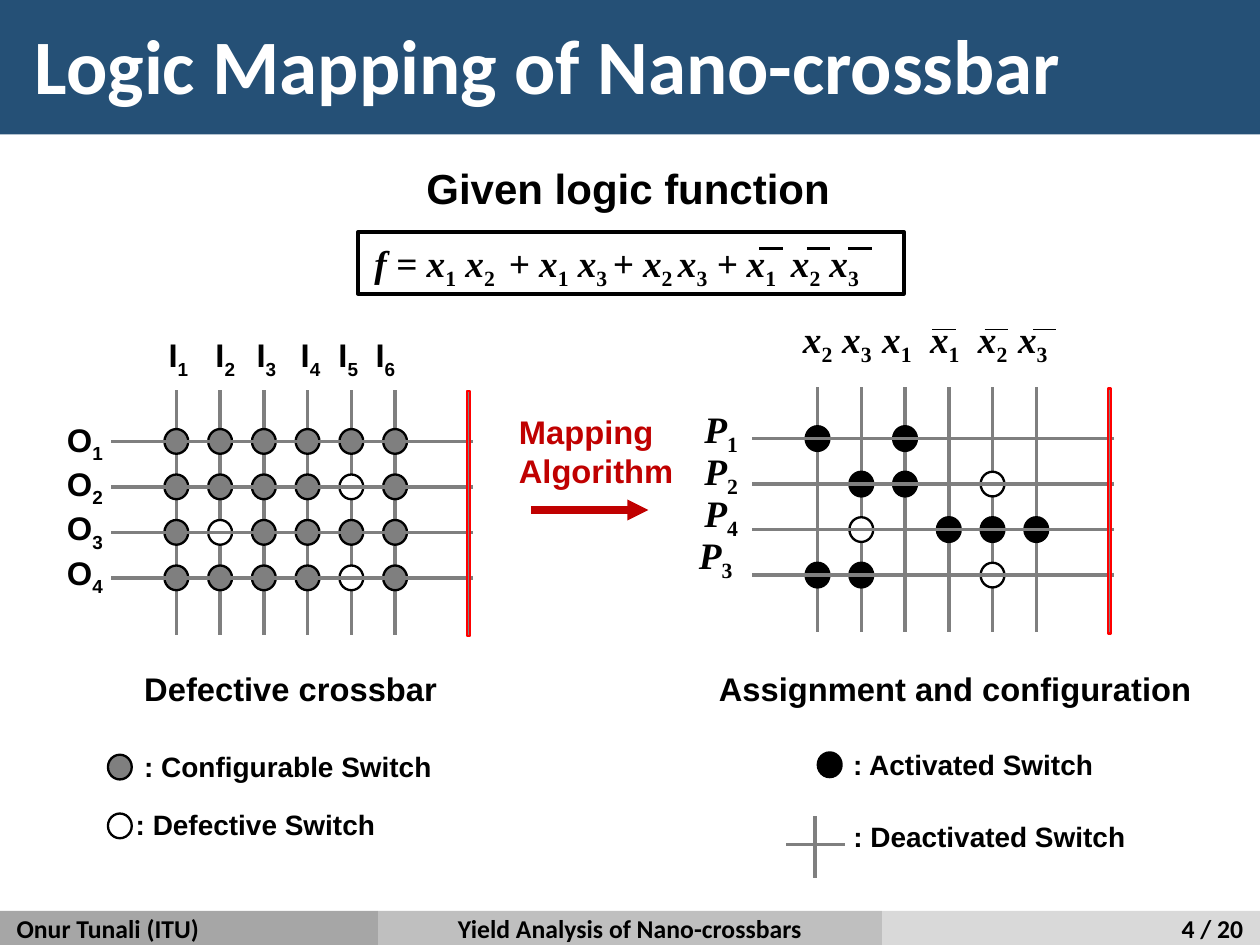
from dataclasses import dataclass
from typing import NamedTuple

from lxml import etree
from pptx import Presentation
from pptx.dml.color import RGBColor
from pptx.enum.shapes import MSO_CONNECTOR, MSO_SHAPE
from pptx.enum.text import MSO_ANCHOR, PP_ALIGN
from pptx.oxml.ns import qn
from pptx.util import Pt

STRAIGHT = MSO_CONNECTOR.STRAIGHT
RECTANGLE, OVAL = MSO_SHAPE.RECTANGLE, MSO_SHAPE.OVAL
TOP, MIDDLE = MSO_ANCHOR.TOP, MSO_ANCHOR.MIDDLE
LEFT, CENTER, RIGHT = PP_ALIGN.LEFT, PP_ALIGN.CENTER, PP_ALIGN.RIGHT

BLACK, WHITE, GRAY = "000000", "FFFFFF", "7F7F7F"
RED, DARK_RED, NAVY = "FF0000", "C00000", "255076"
SLIDE_WIDTH, SLIDE_HEIGHT = 540, 405

COLUMN_COUNT = 6
COLUMN_PITCH, ROW_PITCH = 18.75, 19.5
COLUMN_LENGTH, ROW_LENGTH = 105, 155
SWITCH_WIDTH, SWITCH_HEIGHT = 10.2, 10.6
SWITCH_FILLS = {"c": GRAY, "d": WHITE, "a": BLACK}  # configurable, defective, activated


class Box(NamedTuple):
    left: float
    top: float
    width: float
    height: float


class Style(NamedTuple):
    size: float
    name: str = "Arial"
    color: str = BLACK
    italic: bool = False
    align: PP_ALIGN = LEFT
    anchor: MSO_ANCHOR = TOP
    spacing: float | None = None
    wrap: bool = True
    tabs: tuple[float, ...] = ()


class Label(NamedTuple):
    box: Box
    text: str
    style: Style


class Panel(NamedTuple):
    box: Box
    fill: str
    text: str
    align: PP_ALIGN


@dataclass
class Crossbar:
    """A grid of wires; rows hold one switch letter per column, "." for none."""
    left: float
    top: float
    rows: tuple[str, ...]


class Line(NamedTuple):
    x: float
    y: float
    width: float
    height: float
    color: str = GRAY
    weight: float = 1.5
    arrow: bool = False


MATH = Style(16, "Times New Roman", italic=True)
CAPTION, LEGEND = Style(14), Style(12)
FOOTER = Style(11, "Calibri", anchor=MIDDLE)

CROSSBARS = [
    Crossbar(75.6, 189.2, ("cccccc", "ccccdc", "cdcccc", "ccccdc")),
    Crossbar(350.4, 188, ("a.a...", ".aa.d.", ".d.aaa", "aa..d.")),
]
PANELS = [
    Panel(Box(162, 390.4, 216, 14.6), "BFBFBF", "Yield Analysis of Nano-crossbars", CENTER),
    Panel(Box(0, 390.4, 162, 14.6), "A6A6A6", "Onur Tunali (ITU)", LEFT),
    Panel(Box(378, 390.4, 162, 14.6), "D9D9D9", "4 / 20", RIGHT),
]
# Text in braces is subscript.
FORMULA = "f = x{1} x{2}\t+ x{1} x{3 }+ x{2 }x{3} +\tx{1}\tx{2}\tx{3}"
FORMULA_STYLE = MATH._replace(tabs=(57.5, 159.5, 178.5, 195))
LABELS = [
    Label(Box(7.9, 7.2, 524, 45.4), "Logic Mapping of Nano-crossbar",
          Style(33, "Calibri", WHITE, anchor=MIDDLE, spacing=0.9, wrap=False)),
    Label(Box(175.7, 66.2, 188.6, 29), "Given logic function", Style(18)),
    Label(Box(21.6, 176.4, 33.1, 84.2), "O{1}\nO{2}\nO{3}\nO{4}",
          CAPTION._replace(spacing=Pt(19))),
    Label(Box(65.2, 141, 128, 24.5), "I{1}\tI{2}\tI{3}\tI{4}\tI{5}\tI{6}",
          CAPTION._replace(anchor=MIDDLE, tabs=(20.1, 37.7, 56.6, 72.8, 88.7))),
    Label(Box(54.7, 283, 148, 24.5), "Defective crossbar", CAPTION),
    Label(Box(301, 283, 221, 24.5), "Assignment and configuration", CAPTION),
    Label(Box(290.2, 174.2, 33.1, 98), "P{1}\nP{2}\nP{4}\nP{3 }",
          MATH._replace(align=RIGHT, spacing=Pt(18))),
    Label(Box(337, 133.2, 186.5, 26.6), "x{2}\tx{3}\tx{1}\tx{1}\tx{2}\tx{3}",
          MATH._replace(anchor=MIDDLE, tabs=(16.8, 34, 54.5, 75, 92.2))),
    Label(Box(215.3, 172.8, 87, 41), "Mapping\nAlgorithm", CAPTION._replace(color=DARK_RED)),
    Label(Box(54.7, 317.5, 146, 21.6), ": Configurable Switch", LEGEND),
    Label(Box(51.1, 342.7, 126.7, 21.6), ": Defective Switch", LEGEND),
    Label(Box(358.6, 316.8, 126.7, 21.6), ": Activated Switch", LEGEND),
    Label(Box(358.6, 347.8, 146, 21.6), ": Deactivated Switch", LEGEND),
]
LEGEND_SWITCHES = [(51.4, 328.8, "c"), (51.4, 354, "d"), (355.6, 327.8, "a")]
LINES = [
    *(Line(x, 106.5, 10, 0, BLACK, 1) for x in (325.4, 345.8, 363.6)),
    *(Line(x, 141.2, 10, 0, BLACK, 0.75) for x in (399.6, 422, 442.8)),
    Line(227.5, 218.6, 50.4, 0, DARK_RED, 3, arrow=True),
    Line(349.2, 349.8, 0, 26.6),
    Line(337, 362, 25.2, 0),
]


def rgb(value: str) -> RGBColor:
    return RGBColor.from_string(value)


def write_text(shape, text: str, style: Style) -> None:
    """Fill the shape with one paragraph per line, lowering what is in braces."""
    frame = shape.text_frame
    frame.word_wrap = style.wrap
    frame.vertical_anchor = style.anchor
    for index, line in enumerate(text.split("\n")):
        paragraph = frame.add_paragraph() if index else frame.paragraphs[0]
        paragraph.alignment = style.align
        if style.spacing:
            paragraph.line_spacing = style.spacing
        if style.tabs:
            tab_list = etree.SubElement(paragraph._p.get_or_add_pPr(), qn("a:tabLst"))
            for position in style.tabs:
                etree.SubElement(tab_list, qn("a:tab"), pos=str(Pt(position)), algn="l")
        font = paragraph.font
        font.size, font.name, font.bold = Pt(style.size), style.name, True
        font.italic = style.italic
        font.color.rgb = rgb(style.color)
        for part, content in enumerate(line.replace("}", "{").split("{")):
            if not content:
                continue
            run = paragraph.add_run()
            run.text = content
            if part % 2:
                run.font.italic = False
                run._r.get_or_add_rPr().set("baseline", "-25000")


def add_label(slide, label: Label) -> None:
    write_text(slide.shapes.add_textbox(*map(Pt, label.box)), label.text, label.style)


def add_box(slide, kind: MSO_SHAPE, box: Box, fill: str,
            outline: str | None = None, weight: float = 1):
    shape = slide.shapes.add_shape(kind, *map(Pt, box))
    shape.shadow.inherit = False
    shape.fill.solid()
    shape.fill.fore_color.rgb = rgb(fill)
    if outline:
        shape.line.color.rgb = rgb(outline)
        shape.line.width = Pt(weight)
    else:
        shape.line.fill.background()
    return shape


def add_line(slide, line: Line) -> None:
    connector = slide.shapes.add_connector(
        STRAIGHT, Pt(line.x), Pt(line.y), Pt(line.x + line.width), Pt(line.y + line.height))
    connector.line.color.rgb = rgb(line.color)
    connector.line.width = Pt(line.weight)
    properties = connector._element.spPr
    if line.arrow:
        etree.SubElement(properties.find(qn("a:ln")), qn("a:tailEnd"), type="triangle")
    etree.SubElement(properties, qn("a:effectLst"))


def add_switch(slide, x: float, y: float, kind: str) -> None:
    """Draw a switch centred on x, y."""
    box = Box(x - SWITCH_WIDTH / 2, y - SWITCH_HEIGHT / 2, SWITCH_WIDTH, SWITCH_HEIGHT)
    add_box(slide, OVAL, box, SWITCH_FILLS[kind], BLACK)


def add_crossbar(slide, crossbar: Crossbar) -> None:
    column_xs = [crossbar.left + COLUMN_PITCH * index for index in range(COLUMN_COUNT)]
    row_ys = [crossbar.top + ROW_PITCH * index for index in range(len(crossbar.rows))]
    for x in column_xs:
        add_line(slide, Line(x, crossbar.top - 22, 0, COLUMN_LENGTH))
    for y, row in zip(row_ys, crossbar.rows):
        for x, kind in zip(column_xs, row):
            if kind in SWITCH_FILLS:
                add_switch(slide, x, y, kind)
    for y in row_ys:
        add_line(slide, Line(crossbar.left - 28, y, ROW_LENGTH, 0))
    output_bar = Box(crossbar.left + 124.5, crossbar.top - 21.5, 1.4, COLUMN_LENGTH)
    add_box(slide, RECTANGLE, output_bar, "808080", RED)


def main() -> None:
    presentation = Presentation()
    presentation.slide_width, presentation.slide_height = Pt(SLIDE_WIDTH), Pt(SLIDE_HEIGHT)
    slide = presentation.slides.add_slide(presentation.slide_layouts[6])
    add_box(slide, RECTANGLE, Box(0, 0, SLIDE_WIDTH, 57.6), NAVY)
    for panel in PANELS:
        shape = add_box(slide, RECTANGLE, panel.box, panel.fill)
        write_text(shape, panel.text, FOOTER._replace(align=panel.align))
    for crossbar in CROSSBARS:
        add_crossbar(slide, crossbar)
    formula = add_box(slide, RECTANGLE, Box(153.4, 99.4, 234, 26.6), WHITE, BLACK, 1.5)
    write_text(formula, FORMULA, FORMULA_STYLE)
    for label in LABELS:
        add_label(slide, label)
    for switch in LEGEND_SWITCHES:
        add_switch(slide, *switch)
    for line in LINES:
        add_line(slide, line)
    presentation.save("out.pptx")


if __name__ == "__main__":
    main()
